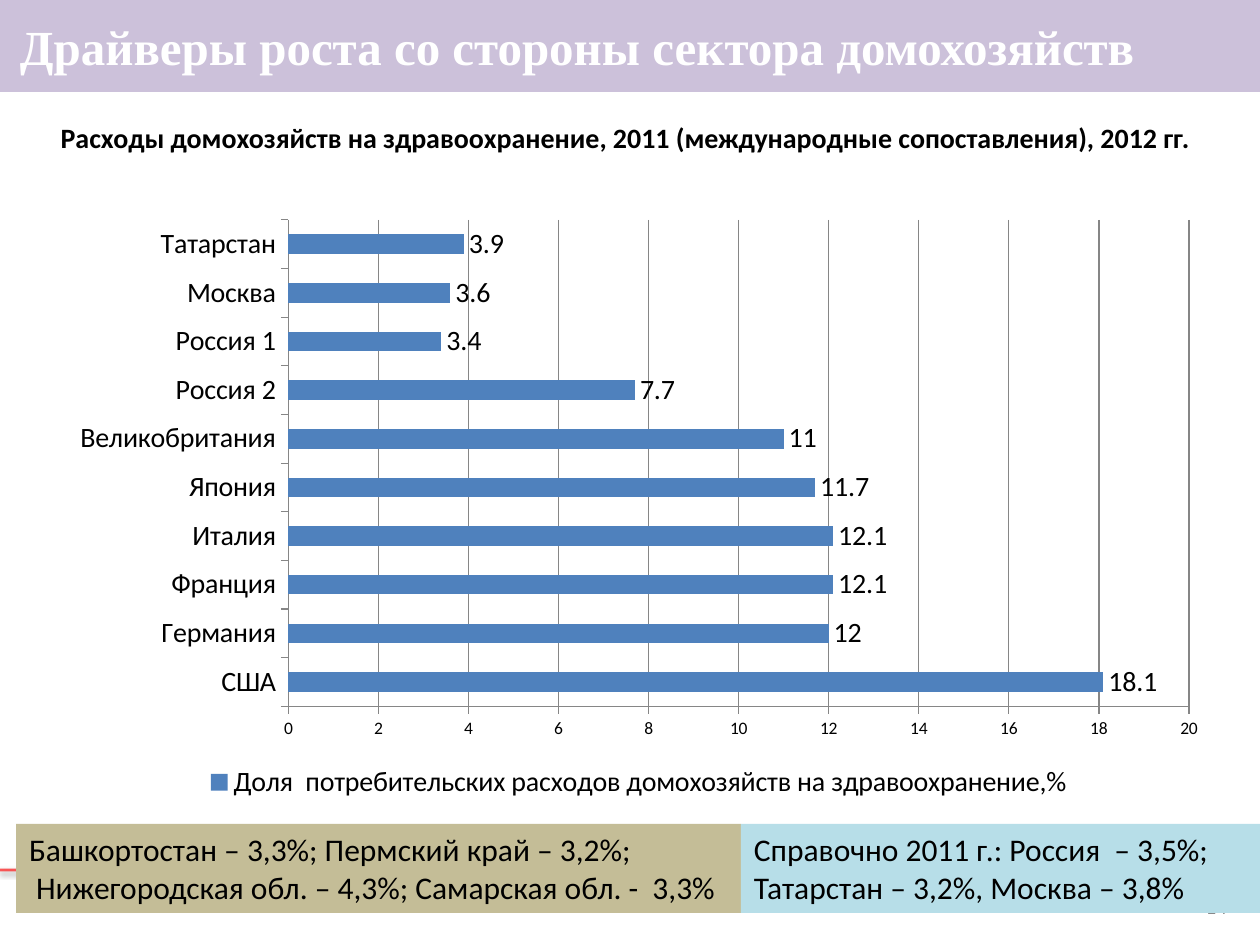
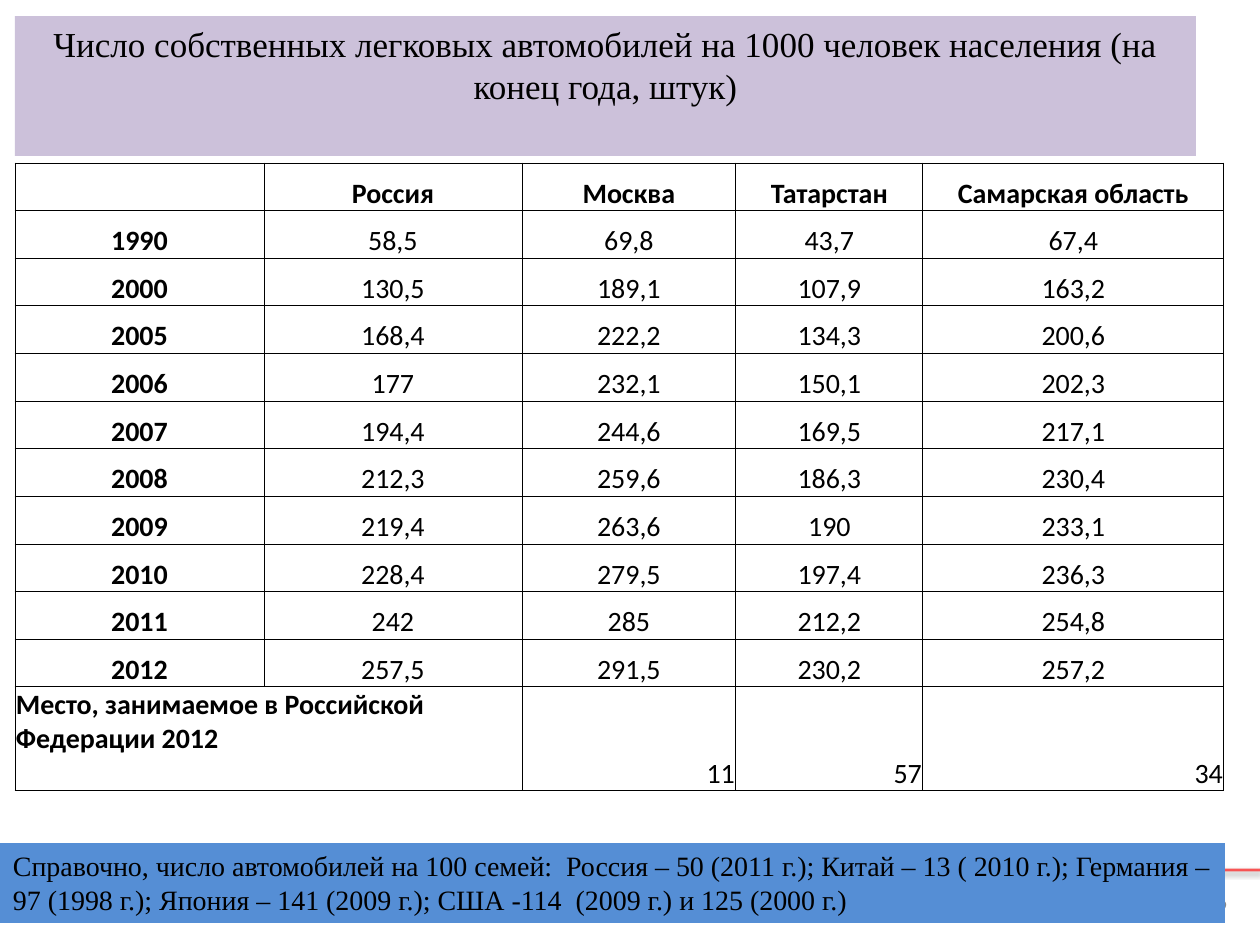
from dataclasses import dataclass
from lxml.etree import SubElement as Sub
from pptx import Presentation
from pptx.chart.data import CategoryChartData as Data
from pptx.dml.color import RGBColor as RGB
from pptx.enum.chart import XL_CHART_TYPE as Kind, XL_LABEL_POSITION as Spot
from pptx.enum.chart import XL_LEGEND_POSITION as Place, XL_TICK_MARK as Tick
from pptx.enum.shapes import MSO_CONNECTOR as Link, MSO_SHAPE as Form
from pptx.enum.text import MSO_ANCHOR as Anchor, MSO_AUTO_SIZE as Fit, PP_ALIGN as Align
from pptx.oxml import parse_xml
from pptx.oxml.ns import nsdecls, qn
from pptx.util import Emu, Pt


@dataclass(frozen=True)
class Theme:
    sans: str = "Calibri"
    serif: str = "Times New Roman"
    ink: str = "000000"
    white: str = "FFFFFF"
    grey: str = "898989"
    grid: str = "868686"
    rule: str = "FF0000"
    band: str = "CCC1DA"
    bar: str = "4F81BD"
    sand: str = "C4BD97"
    aqua: str = "B7DEE8"
    blue: str = "558ED5"
    head: int = 28
    sub: int = 20
    note: int = 18
    body: int = 16
    page: int = 12
    tick: int = 10


T = Theme()
WIDE, HIGH = 1260, 945
PAD = (13, 6, 13, 6)

COSTS = {
    "page": "14",
    "title": "Драйверы роста со стороны сектора домохозяйств",
    "head": "Расходы домохозяйств на здравоохранение, 2011 "
            "(международные сопоставления), 2012 гг.",
    "series": "Доля  потребительских расходов домохозяйств на здравоохранение,%",
    "shares": [
        ("США", 18.1), ("Германия", 12), ("Франция", 12.1), ("Италия", 12.1),
        ("Япония", 11.7), ("Великобритания", 11), ("Россия 2", 7.7),
        ("Россия 1", 3.4), ("Москва", 3.6), ("Татарстан", 3.9),
    ],
    "notes": [
        ("Башкортостан – 3,3%; Пермский край – 3,2%;\n"
         " Нижегородская обл. – 4,3%; Самарская обл. -  3,3%",
         (16, 824, 725, 89), T.sand),
        ("Справочно 2011 г.: Россия  – 3,5%;\nТатарстан – 3,2%, Москва – 3,8%",
         (741, 824, 519, 89), T.aqua),
    ],
}

CARS = {
    "page": "19",
    "title": "Число собственных легковых автомобилей на 1000 человек населения "
             "(на конец года, штук)",
    "cols": [249, 258, 214, 187, 301],
    "rows": [
        ("", "Россия", "Москва", "Татарстан", "Самарская область"),
        ("1990", "58,5", "69,8", "43,7", "67,4"),
        ("2000", "130,5", "189,1", "107,9", "163,2"),
        ("2005", "168,4", "222,2", "134,3", "200,6"),
        ("2006", "177", "232,1", "150,1", "202,3"),
        ("2007", "194,4", "244,6", "169,5", "217,1"),
        ("2008", "212,3", "259,6", "186,3", "230,4"),
        ("2009", "219,4", "263,6", "190", "233,1"),
        ("2010", "228,4", "279,5", "197,4", "236,3"),
        ("2011", "242", "285", "212,2", "254,8"),
        ("2012", "257,5", "291,5", "230,2", "257,2"),
        ("Место, занимаемое в Российской Федерации 2012", "", "11", "57", "34"),
    ],
    "note": "Справочно, число автомобилей на 100 семей:  Россия – 50 (2011 г.); "
            "Китай – 13 ( 2010 г.); Германия – 97 (1998 г.); Япония – 141 (2009 г.); "
            "США -114  (2009 г.) и 125 (2000 г.)",
}


def px(n):
    return Emu(round(n * 914400 / 126))


def area(box):
    return [px(n) for n in box]


def paint(part, color):
    part.fill.solid()
    part.fill.fore_color.rgb = RGB.from_string(color)


def dress(font, size, color=T.ink, name=T.sans, bold=False):
    font.size, font.name, font.bold = Pt(size), name, bold
    font.color.rgb = RGB.from_string(color)


def write(frame, text, size, align=Align.LEFT, **look):
    frame.text = text
    for para in frame.paragraphs:
        para.alignment = align
        for run in para.runs:
            dress(run.font, size, **look)


def inset(part, pad):
    (part.margin_left, part.margin_top,
     part.margin_right, part.margin_bottom) = area(pad)


def settle(frame, pad=PAD, anchor=Anchor.TOP):
    frame.word_wrap, frame.auto_size = True, Fit.NONE
    frame.vertical_anchor = anchor
    inset(frame, pad)


def label(slide, text, box, size, anchor=Anchor.TOP, **look):
    frame = slide.shapes.add_textbox(*area(box)).text_frame
    settle(frame, anchor=anchor)
    write(frame, text, size, **look)


def note(slide, text, box, fill, size, **look):
    shape = slide.shapes.add_shape(Form.RECTANGLE, *area(box))
    shape.shadow.inherit = False
    shape.line.fill.background()
    paint(shape, fill)
    settle(shape.text_frame)
    write(shape.text_frame, text, size, **look)


def title(slide, text, box, size, align, pad=PAD, anchor=Anchor.TOP, **look):
    shape = slide.shapes.title
    shape.left, shape.top, shape.width, shape.height = area(box)
    paint(shape, T.band)
    settle(shape.text_frame, pad, anchor)
    write(shape.text_frame, text, size, align, name=T.serif, **look)


def start(deck, page):
    """Add a slide with the shared footer rule and page number."""
    slide = deck.slides.add_slide(deck.slide_layouts[5])
    rule = slide.shapes.add_connector(Link.STRAIGHT, *area((0, 870, WIDE, 870)))
    rule.line.width = Pt(1.5)
    rule.line.color.rgb = RGB.from_string(T.rule)
    props = rule.element.spPr
    Sub(props.find(".//" + qn("a:srgbClr")), qn("a:alpha"), val="64000")
    props.append(parse_xml(
        f'<a:effectLst {nsdecls("a")}><a:outerShdw blurRad="40000" dist="20000" '
        f'dir="5400000" rotWithShape="0"><a:srgbClr val="{T.ink}">'
        '<a:alpha val="38000"/></a:srgbClr></a:outerShdw></a:effectLst>'))
    label(slide, page, (1176, 881, 64, 50), T.page, Anchor.MIDDLE,
          align=Align.RIGHT, color=T.grey)
    return slide


def plot(slide, name, shares, box):
    data = Data()
    data.categories = [place for place, _ in shares]
    data.add_series(name, [share for _, share in shares])
    chart = slide.shapes.add_chart(Kind.BAR_CLUSTERED, *area(box), data).chart
    chart.has_title = False
    dress(chart.font, T.tick)
    chart.has_legend = True
    chart.legend.position = Place.BOTTOM
    chart.legend.include_in_layout = False
    dress(chart.legend.font, T.body)

    cats, vals = chart.category_axis, chart.value_axis
    vals.has_major_gridlines = True
    for part in (cats.format, vals.format, vals.major_gridlines.format):
        part.line.color.rgb = RGB.from_string(T.grid)
        part.line.width = Pt(0.75)
    for axis, size in ((cats, T.body), (vals, T.tick)):
        axis.major_tick_mark, axis.minor_tick_mark = Tick.OUTSIDE, Tick.NONE
        dress(axis.tick_labels.font, size)
    vals.minimum_scale, vals.maximum_scale, vals.major_unit = 0, 20, 2

    bars = chart.plots[0]
    bars.gap_width, bars.vary_by_categories = 150, False
    paint(bars.series[0].format, T.bar)
    bars.has_data_labels = True
    tags = bars.data_labels
    tags.show_value, tags.position = True, Spot.OUTSIDE_END
    dress(tags.font, T.body)


def border(cell):
    props = cell._tc.get_or_add_tcPr()
    for i, side in enumerate("LRTB"):
        props.insert(i, parse_xml(
            f'<a:ln{side} {nsdecls("a")} w="6350"><a:solidFill>'
            f'<a:srgbClr val="{T.ink}"/></a:solidFill></a:ln{side}>'))


def tabulate(slide, rows, cols, left, top, body, foot):
    """Draw the grid: equal rows share the body height, the last row has its own."""
    table = slide.shapes.add_table(
        len(rows), len(cols), *area((left, top, sum(cols), body + foot))).table
    table.first_row = table.horz_banding = False
    for col, width in zip(table.columns, cols):
        col.width = px(width)
    last = len(rows) - 1
    for r, row in enumerate(rows):
        table.rows[r].height = px(foot if r == last else body / last)
        for c, text in enumerate(row):
            cell = table.cell(r, c)
            align = Align.CENTER
            if r == last:
                align = Align.RIGHT if c else Align.LEFT
            inset(cell, (1, 1, 1, 0))
            cell.vertical_anchor = Anchor.TOP if r == last and c == 0 else Anchor.BOTTOM
            write(cell.text_frame, text, T.body, align, bold=r == 0 or c == 0)
            paint(cell, T.white)
            border(cell)
    table.cell(last, 0).merge(table.cell(last, 1))


def main():
    deck = Presentation()
    deck.slide_width, deck.slide_height = px(WIDE), px(HIGH)

    slide = start(deck, COSTS["page"])
    title(slide, COSTS["title"], (0, 0, WIDE, 92), T.head, Align.JUSTIFY,
          (20, 5, 13, 5), Anchor.MIDDLE, color=T.white, bold=True)
    label(slide, COSTS["head"], (30, 115, 1191, 47), T.body,
          align=Align.CENTER, bold=True)
    for text, box, fill in COSTS["notes"]:
        note(slide, text, box, fill, T.note)
    plot(slide, COSTS["series"], COSTS["shares"], (57, 208, 1164, 597))

    slide = start(deck, CARS["page"])
    title(slide, CARS["title"], (15, 16, 1181, 140), T.sub, Align.CENTER)
    tabulate(slide, CARS["rows"], CARS["cols"], 15, 163, 524, 104)
    note(slide, CARS["note"], (0, 843, 1225, 80), T.blue, T.body, name=T.serif)

    deck.save("out.pptx")


if __name__ == "__main__":
    main()
